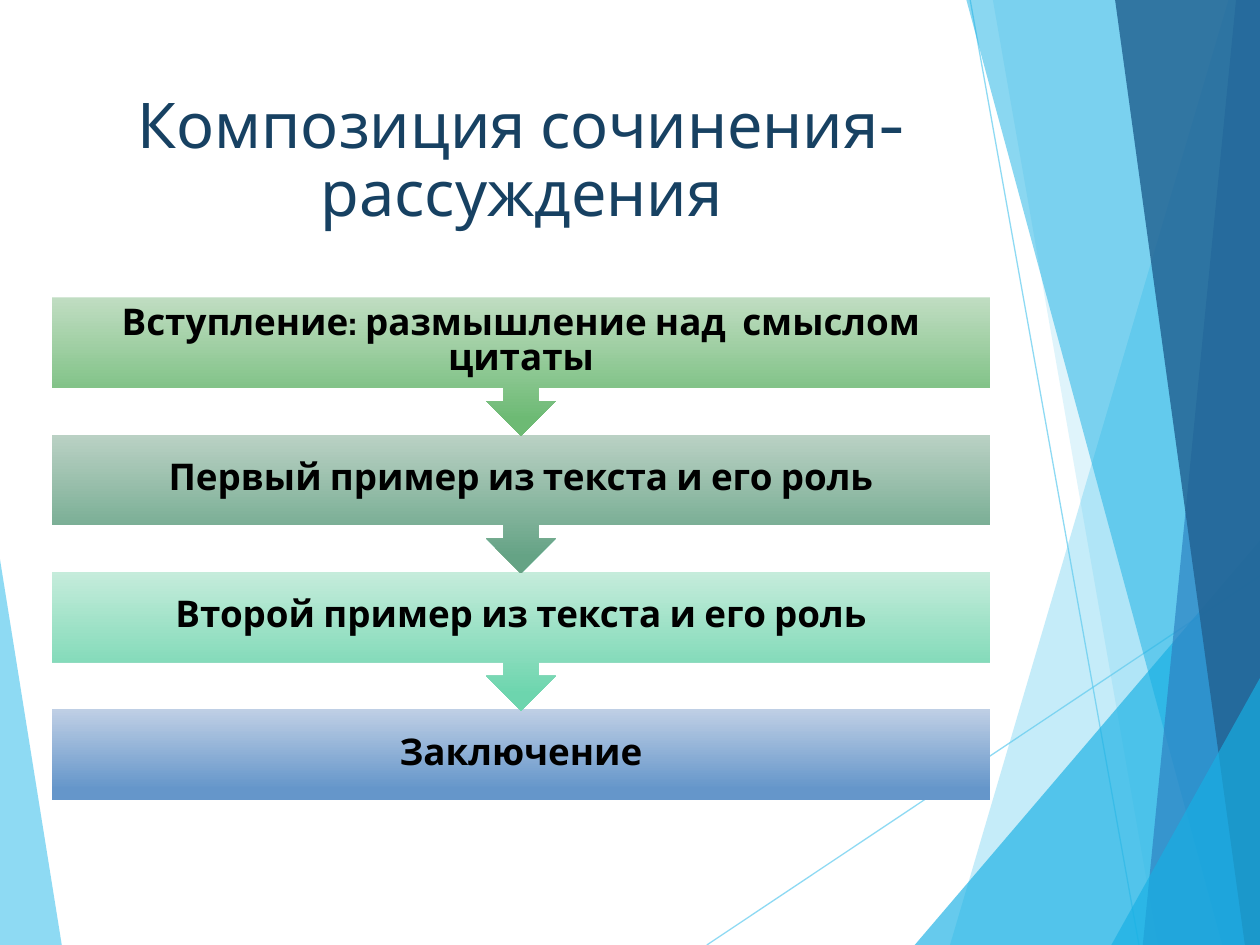
from lxml import etree
from pptx import Presentation
from pptx.dml.color import RGBColor
from pptx.enum.shapes import MSO_CONNECTOR, MSO_SHAPE
from pptx.enum.text import MSO_ANCHOR, MSO_AUTO_SIZE, PP_ALIGN
from pptx.oxml.ns import qn
from pptx.util import Inches, Pt

STRAIGHT = MSO_CONNECTOR.STRAIGHT
BAR = MSO_SHAPE.RECTANGLE
ARROW_BAR = MSO_SHAPE.DOWN_ARROW_CALLOUT
CENTER = PP_ALIGN.CENTER
TOP, MIDDLE = MSO_ANCHOR.TOP, MSO_ANCHOR.MIDDLE
NO_AUTOFIT = MSO_AUTO_SIZE.NONE

WIDTH, HEIGHT = 10, 7.5
COLORS = {
    "sky": "5FCBEF", "cyan": "17B0E4", "blue": "2E83C3", "navy": "226292",
    "title": "174162", "text": "000000",
}

# Background facets: colour, opacity in percent, corner points
FACETS = [
    ("sky", 70, [(0, 4.44), (0.49, HEIGHT), (0, HEIGHT)]),
    ("sky", 36, [(9.75, 0), (7.54, HEIGHT), (WIDTH, HEIGHT), (WIDTH, 0)]),
    ("sky", 20, [(7.88, 0), (9.19, HEIGHT), (WIDTH, HEIGHT), (WIDTH, 0)]),
    ("cyan", 66, [(7.26, HEIGHT), (WIDTH, 4.29), (WIDTH, HEIGHT)]),
    ("cyan", 50, [(7.67, 0), (9.7, HEIGHT), (WIDTH, HEIGHT), (WIDTH, 0)]),
    ("blue", 70, [(9.81, 0), (9.07, HEIGHT), (WIDTH, HEIGHT), (WIDTH, 0)]),
    ("navy", 82, [(8.85, 0), (9.88, HEIGHT), (WIDTH, HEIGHT), (WIDTH, 0)]),
    ("cyan", 66, [(8.82, HEIGHT), (WIDTH, 5.38), (WIDTH, HEIGHT)]),
]
RAYS = [((5.61, HEIGHT), (WIDTH, 4.57)), ((7.7, 0), (9.04, HEIGHT))]

# Stages of the essay: wording, gradient start and end
STAGES = [
    ("Вступление: размышление над  смыслом цитаты", "C0DDC2", "6DBA74"),
    ("Первый пример из текста и его роль", "BAD1C4", "65A385"),
    ("Второй пример из текста и его роль", "C5ECDB", "6DD5AE"),
    ("Заключение", "BFCFE5", "6596CA"),
]
STAGE_LEFT, STAGE_TOP, STAGE_WIDTH = 0.41, 2.36, 7.45
STAGE_STEP, BAR_HEIGHT, ARROW_BAR_HEIGHT = 1.09, 0.72, 1.1


def write(frame, text, size, color, font="Cabin", bold=False, spacing=0.9,
          anchor=MIDDLE, inset=None):
    frame.word_wrap = True
    frame.auto_size = NO_AUTOFIT
    frame.vertical_anchor = anchor
    if inset is not None:
        frame.margin_left = frame.margin_right = Inches(inset)
        frame.margin_top = frame.margin_bottom = Inches(inset)
    paragraph = frame.paragraphs[0]
    paragraph.alignment = CENTER
    paragraph.line_spacing = spacing
    run = paragraph.add_run()
    run.text = text
    run.font.name = font
    run.font.size = Pt(size)
    run.font.bold = bold
    run.font.color.rgb = RGBColor.from_string(color)


def set_opacity(fill_parent, percent):
    color = next(fill_parent.iter(qn("a:srgbClr")))
    etree.SubElement(color, qn("a:alpha")).set("val", str(percent * 1000))


class SlideBuilder:
    def __init__(self, slide, colors):
        self.slide = slide
        self.colors = colors

    def facet(self, color, opacity, points):
        corners = [(Inches(x), Inches(y)) for x, y in points]
        outline = self.slide.shapes.build_freeform(*corners[0])
        outline.add_line_segments(corners[1:], close=True)
        facet = outline.convert_to_shape()
        facet.shadow.inherit = False
        facet.fill.solid()
        facet.fill.fore_color.rgb = RGBColor.from_string(self.colors[color])
        facet.line.fill.background()
        set_opacity(facet.fill._xPr, opacity)

    def ray(self, start, end):
        ray = self.slide.shapes.add_connector(
            STRAIGHT, *(Inches(v) for v in (*start, *end)))
        ray.line.width = Pt(0.75)
        ray.line.color.rgb = RGBColor.from_string(self.colors["sky"])
        properties = ray._element.spPr
        set_opacity(properties, 70)
        etree.SubElement(properties, qn("a:effectLst"))

    def title(self, text, left, top, width, height):
        title = self.slide.shapes.title
        title.left, title.top = Inches(left), Inches(top)
        title.width, title.height = Inches(width), Inches(height)
        write(title.text_frame, text, 36, self.colors["title"],
              anchor=TOP, inset=0.08)

    def stage(self, kind, text, top, height, start, end):
        stage = self.slide.shapes.add_shape(
            kind, Inches(STAGE_LEFT), Inches(top),
            Inches(STAGE_WIDTH), Inches(height))
        stage.shadow.inherit = False
        stage.line.fill.background()
        stage.fill.gradient()
        stage.fill.gradient_angle = 270
        for stop, color, position in zip(
                stage.fill.gradient_stops, (start, end), (0, 0.88)):
            stop.color.rgb = RGBColor.from_string(color)
            stop.position = position
        write(stage.text_frame, text, 21, self.colors["text"], bold=True,
              spacing=0.8, inset=0.16)


def main():
    deck = Presentation()
    deck.slide_width, deck.slide_height = Inches(WIDTH), Inches(HEIGHT)
    builder = SlideBuilder(deck.slides.add_slide(deck.slide_layouts[5]), COLORS)

    # Background
    for start, end in RAYS:
        builder.ray(start, end)
    for color, opacity, points in FACETS:
        builder.facet(color, opacity, points)

    # Title
    builder.title("Композиция сочинения-рассуждения", 0.67, 0.67, 6.94, 1.44)

    # Stages, last one first so that each arrow lies over the next bar
    last = len(STAGES) - 1
    for index in range(last, -1, -1):
        text, start, end = STAGES[index]
        kind, height = ((BAR, BAR_HEIGHT) if index == last
                        else (ARROW_BAR, ARROW_BAR_HEIGHT))
        builder.stage(kind, text, STAGE_TOP + index * STAGE_STEP, height,
                      start, end)

    deck.save("out.pptx")


if __name__ == "__main__":
    main()
